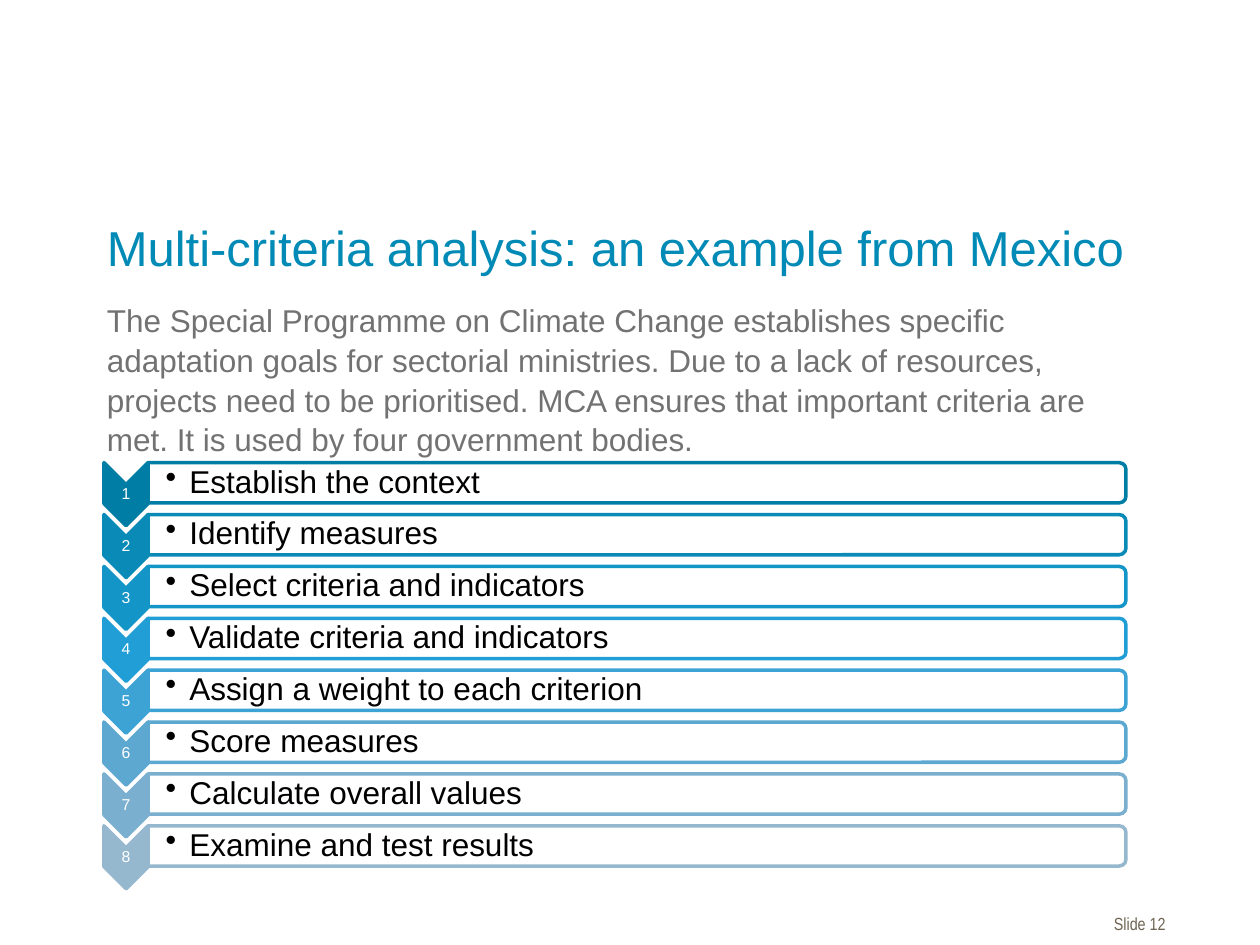
from dataclasses import dataclass
from lxml import etree
from pptx import Presentation
from pptx.dml.color import RGBColor
from pptx.enum.shapes import MSO_SHAPE
from pptx.enum.text import MSO_ANCHOR, PP_ALIGN
from pptx.oxml.ns import qn
from pptx.util import Pt

CHEVRON, ROUND_END = MSO_SHAPE.CHEVRON, MSO_SHAPE.ROUND_2_SAME_RECTANGLE
TOP, MIDDLE = MSO_ANCHOR.TOP, MSO_ANCHOR.MIDDLE
LEFT, CENTER, RIGHT = PP_ALIGN.LEFT, PP_ALIGN.CENTER, PP_ALIGN.RIGHT


@dataclass(frozen=True)
class Theme:
    """Colours, fonts and type sizes of the slide."""
    font: str = "Arial"
    narrow: str = "Arial Narrow"
    title: str = "008AB5"
    body: str = "727272"
    footer: str = "6E6452"
    black: str = "000000"
    white: str = "FFFFFF"
    title_size: float = 28
    text_size: float = 18
    footer_size: float = 10
    number_size: float = 9
    line_width: float = 2


THEME = Theme()
TITLE = "Multi-criteria analysis: an example from Mexico"
INTRO = (
    "The Special Programme on Climate Change establishes specific adaptation goals "
    "for sectorial ministries. Due to a lack of resources, projects need to be "
    "prioritised. MCA ensures that important criteria are met. It is used by four "
    "government bodies."
)
STEPS = [
    ("Establish the context", "007DA4"),
    ("Identify measures", "098AB7"),
    ("Select criteria and indicators", "1495C8"),
    ("Validate criteria and indicators", "219ED6"),
    ("Assign a weight to each criterion", "3DA3D5"),
    ("Score measures", "5DA8D1"),
    ("Calculate overall values", "7AAFCF"),
    ("Examine and test results", "95B8CF"),
]


def add_text(page, box, text, size, color, font=THEME.font, align=LEFT, anchor=TOP,
             insets=(7.2, 3.6, 7.2, 3.6), spacing=1.0, bullet_indent=0):
    """Add a wrapped one-paragraph text box and return its paragraph."""
    frame = page.shapes.add_textbox(*map(Pt, box)).text_frame
    frame.word_wrap = True
    frame.vertical_anchor = anchor
    frame.margin_left, frame.margin_top, frame.margin_right, frame.margin_bottom = map(Pt, insets)
    para = frame.paragraphs[0]
    para.text = text
    if bullet_indent:
        properties = para._p.get_or_add_pPr()
        properties.set("marL", str(Pt(bullet_indent)))
        properties.set("indent", str(-Pt(bullet_indent)))
        etree.SubElement(properties, qn("a:buChar")).set("char", "•")
    para.alignment = align
    para.line_spacing = spacing
    span = para.runs[0]
    span.font.name = font
    span.font.size = Pt(size)
    span.font.color.rgb = RGBColor.from_string(color)
    return para


def add_turned_shape(page, kind, box, fill, line):
    """Add a shape turned clockwise by 90 degrees that fills the given box."""
    left, top, width, height = box
    shift = (width - height) / 2
    shape = page.shapes.add_shape(kind, Pt(left + shift), Pt(top - shift), Pt(height), Pt(width))
    shape.rotation = 90
    shape.shadow.inherit = False
    shape.fill.solid()
    shape.fill.fore_color.rgb = RGBColor.from_string(fill)
    shape.line.color.rgb = RGBColor.from_string(line)
    shape.line.width = Pt(THEME.line_width)
    return shape


def add_step(page, box, number, label, color):
    """Draw one numbered chevron and its labelled bar from the top left of the box."""
    left, top, width, height = box
    chevron_width, chevron_height, number_height = 25.2, 36, 10.8
    thin = 0.72
    add_turned_shape(page, CHEVRON, (left, top, chevron_width, chevron_height), color, color)
    number_top = top + (chevron_height - number_height) / 2
    add_text(page, (left, number_top, chevron_width, number_height), str(number),
             THEME.number_size, THEME.white, align=CENTER, anchor=MIDDLE,
             insets=(thin,) * 4, spacing=0.9)
    bar_left, bar_width = left + chevron_width, width - chevron_width
    bar = add_turned_shape(page, ROUND_END, (bar_left, top, bar_width, height),
                           THEME.white, color)
    solid_color = bar._element.spPr.find(qn("a:solidFill"))[0]
    etree.SubElement(solid_color, qn("a:alpha")).set("val", "90000")
    add_text(page, (bar_left, top + 1.1, bar_width - 1, height - 2.2), label,
             THEME.text_size, THEME.black, anchor=MIDDLE,
             insets=(10.08, thin, thin, thin), spacing=0.9, bullet_indent=13.5)


def add_steps(page, box):
    """Stack all steps at equal distances in the box."""
    left, top, width, height = box
    last_chevron = 36
    pitch = (height - last_chevron) / (len(STEPS) - 1)
    for index, (label, color) in enumerate(STEPS):
        add_step(page, (left, top + index * pitch, width, 23), index + 1, label, color)


def add_heading(page, box):
    """Place the title and the introduction below it."""
    left, top, width, height = box
    title_height, gap = 49, 2
    add_text(page, (left, top, width, title_height), TITLE, THEME.title_size,
             THEME.title, anchor=MIDDLE)
    intro_top = top + title_height + gap
    para = add_text(page, (left, intro_top, width, top + height - intro_top), INTRO,
                    THEME.text_size, THEME.body, spacing=1.05)
    para.space_after = Pt(8)


def add_footer(page, box):
    """Place the slide number at the right of the box."""
    add_text(page, box, "Slide 12", THEME.footer_size, THEME.footer, font=THEME.narrow,
             align=RIGHT, insets=(7.2, 3.6, 0, 3.6))


def main():
    """Build and save the deck."""
    deck = Presentation()
    deck.slide_width, deck.slide_height = Pt(720), Pt(540)
    page = deck.slides.add_slide(deck.slide_layouts[6])
    add_footer(page, (593, 518.4, 73, 19.4))
    add_heading(page, (54, 116.6, 612, 376.6))
    add_steps(page, (59.4, 264.4, 584, 243.5))
    deck.save("out.pptx")


if __name__ == "__main__":
    main()
